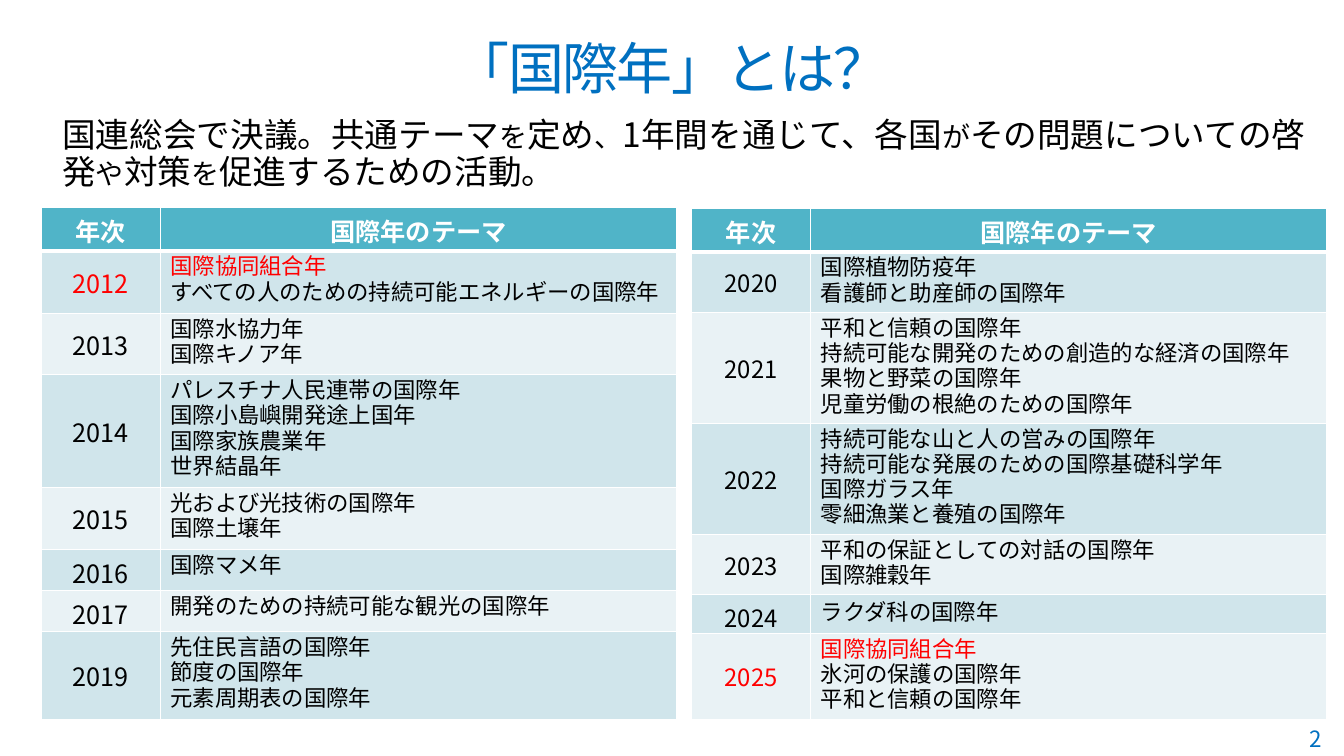
"""Build a slide that explains the United Nations international years."""
from dataclasses import dataclass

from lxml.etree import SubElement
from pptx import Presentation
from pptx.dml.color import RGBColor
from pptx.enum.text import MSO_ANCHOR, PP_ALIGN
from pptx.oxml import parse_xml
from pptx.oxml.ns import nsdecls, qn
from pptx.slide import Slide
from pptx.table import _Cell
from pptx.text.text import Font, _Paragraph
from pptx.util import Inches, Pt


@dataclass(frozen=True)
class Theme:
    """Colours, typeface and type sizes of the slide."""
    typeface: str = "Noto Sans CJK JP"
    accent: str = "0070C0"
    text: str = "000000"
    highlight: str = "FF0000"
    white: str = "FFFFFF"
    header: str = "50B4C8"
    bands: tuple[str, str] = ("D0E5EB", "E9F2F5")
    title_size: float = 40
    lead_size: float = 24
    particle_size: float = 20
    header_size: float = 18
    theme_size: float = 16
    theme_leading: float = 18


@dataclass(frozen=True)
class Box:
    """Position and size in inches."""
    left: float
    top: float
    width: float
    height: float


@dataclass(frozen=True)
class Phrase:
    """A piece of the lead sentence."""
    text: str
    size: float
    spacing: float = 0


@dataclass(frozen=True)
class YearRow:
    """A year with its themes and its row height."""
    year: str
    height: float
    themes: tuple[str, ...]


@dataclass(frozen=True)
class YearTable:
    """A table of international years."""
    left: float
    top: float
    year_size: float
    theme_anchor: MSO_ANCHOR
    rows: tuple[YearRow, ...]


THEME = Theme()
COOPERATIVES = "国際協同組合年"
HEADINGS = ("年次", "国際年のテーマ")
COLUMN_WIDTHS = (1.18, 5.12)
HEADER_HEIGHT = 0.43

LEAD = (
    Phrase("国連総会で決議。共通テーマ", THEME.lead_size),
    Phrase("を", THEME.particle_size),
    Phrase("定め", THEME.lead_size),
    Phrase("、", THEME.particle_size, -1.5),
    Phrase("1年間を通じて、各国", THEME.lead_size),
    Phrase("が", THEME.particle_size),
    Phrase("その問題についての啓発", THEME.lead_size),
    Phrase("や", THEME.particle_size),
    Phrase("対策", THEME.lead_size),
    Phrase("を", THEME.particle_size),
    Phrase("促進するための活動。", THEME.lead_size),
)

TABLES = (
    YearTable(0.41, 2.06, 18, MSO_ANCHOR.TOP, (
        YearRow("2012", 0.62, (COOPERATIVES, "すべての人のための持続可能エネルギーの国際年")),
        YearRow("2013", 0.61, ("国際水協力年", "国際キノア年")),
        YearRow("2014", 1.12, ("パレスチナ人民連帯の国際年", "国際小島嶼開発途上国年",
                               "国際家族農業年", "世界結晶年")),
        YearRow("2015", 0.61, ("光および光技術の国際年", "国際土壌年")),
        YearRow("2016", 0.41, ("国際マメ年",)),
        YearRow("2017", 0.41, ("開発のための持続可能な観光の国際年",)),
        YearRow("2019", 0.87, ("先住民言語の国際年", "節度の国際年", "元素周期表の国際年")),
    )),
    YearTable(6.86, 2.07, 17, MSO_ANCHOR.MIDDLE, (
        YearRow("2020", 0.59, ("国際植物防疫年", "看護師と助産師の国際年")),
        YearRow("2021", 1.05, ("平和と信頼の国際年", "持続可能な開発のための創造的な経済の国際年",
                               "果物と野菜の国際年", "児童労働の根絶のための国際年")),
        YearRow("2022", 1.09, ("持続可能な山と人の営みの国際年", "持続可能な発展のための国際基礎科学年",
                               "国際ガラス年", "零細漁業と養殖の国際年")),
        YearRow("2023", 0.59, ("平和の保証としての対話の国際年", "国際雑穀年")),
        YearRow("2024", 0.36, ("ラクダ科の国際年",)),
        YearRow("2025", 0.84, (COOPERATIVES, "氷河の保護の国際年", "平和と信頼の国際年")),
    )),
)


def style_font(font: Font, size: float, color: str, bold: bool = False) -> None:
    """Set the typeface for Latin and Japanese text, the size and the colour."""
    font.name = THEME.typeface
    font.size = Pt(size)
    font.bold = bold
    font.color.rgb = RGBColor.from_string(color)
    SubElement(font._element, qn("a:ea"), typeface=THEME.typeface)


def set_spacing(font: Font, points: float) -> None:
    """Set the space between characters."""
    font._element.set("spc", str(round(points * 100)))


def add_text_box(slide: Slide, box: Box, anchor: MSO_ANCHOR) -> _Paragraph:
    """Add a wrapping text box and return its first paragraph."""
    shape = slide.shapes.add_textbox(Inches(box.left), Inches(box.top),
                                     Inches(box.width), Inches(box.height))
    shape.text_frame.word_wrap = True
    shape.text_frame.vertical_anchor = anchor
    return shape.text_frame.paragraphs[0]


def add_label(slide: Slide, box: Box, text: str, size: float, anchor: MSO_ANCHOR,
              alignment: PP_ALIGN, spacing: float = 0) -> None:
    """Add a single line in the accent colour."""
    paragraph = add_text_box(slide, box, anchor)
    paragraph.text = text
    paragraph.alignment = alignment
    style_font(paragraph.font, size, THEME.accent)
    set_spacing(paragraph.font, spacing)


def add_lead(slide: Slide, box: Box) -> None:
    """Add the lead sentence with smaller particles."""
    paragraph = add_text_box(slide, box, MSO_ANCHOR.TOP)
    paragraph.line_spacing = 0.9
    paragraph.space_before = Pt(10)
    for phrase in LEAD:
        run = paragraph.add_run()
        run.text = phrase.text
        style_font(run.font, phrase.size, THEME.text)
        set_spacing(run.font, phrase.spacing)


def style_cell(cell: _Cell, fill: str, anchor: MSO_ANCHOR, bottom: float = 1) -> None:
    """Fill a cell and give it white borders."""
    cell.vertical_anchor = anchor
    properties = cell._tc.get_or_add_tcPr()
    for side, width in (("L", 1), ("R", 1), ("T", 1), ("B", bottom)):
        properties.append(parse_xml(
            f'<a:ln{side} {nsdecls("a")} w="{Pt(width)}"><a:solidFill>'
            f'<a:srgbClr val="{THEME.white}"/></a:solidFill></a:ln{side}>'))
    cell.fill.solid()
    cell.fill.fore_color.rgb = RGBColor.from_string(fill)


def write_centred(cell: _Cell, text: str, size: float, color: str, bold: bool = False) -> None:
    """Write one centred line in a cell."""
    paragraph = cell.text_frame.paragraphs[0]
    paragraph.text = text
    paragraph.alignment = PP_ALIGN.CENTER
    style_font(paragraph.font, size, color, bold)


def write_themes(cell: _Cell, themes: tuple[str, ...]) -> None:
    """Write one theme per paragraph."""
    cell.text = "\n".join(themes)
    for paragraph, name in zip(cell.text_frame.paragraphs, themes):
        paragraph.line_spacing = Pt(THEME.theme_leading)
        color = THEME.highlight if name == COOPERATIVES else THEME.text
        style_font(paragraph.font, THEME.theme_size, color)


def add_year_table(slide: Slide, content: YearTable) -> None:
    """Add a table with a header row and banded year rows."""
    heights = [HEADER_HEIGHT] + [row.height for row in content.rows]
    table = slide.shapes.add_table(
        len(heights), len(COLUMN_WIDTHS), Inches(content.left), Inches(content.top),
        Inches(sum(COLUMN_WIDTHS)), Inches(sum(heights))).table
    for column, width in zip(table.columns, COLUMN_WIDTHS):
        column.width = Inches(width)
    for table_row, height in zip(table.rows, heights):
        table_row.height = Inches(height)
    for index, heading in enumerate(HEADINGS):
        cell = table.cell(0, index)
        style_cell(cell, THEME.header, MSO_ANCHOR.MIDDLE, bottom=3)
        write_centred(cell, heading, THEME.header_size, THEME.white, bold=True)
    for index, row in enumerate(content.rows):
        year_cell, theme_cell = table.rows[index + 1].cells
        band = THEME.bands[index % 2]
        style_cell(year_cell, band, MSO_ANCHOR.MIDDLE)
        style_cell(theme_cell, band, content.theme_anchor)
        color = THEME.highlight if COOPERATIVES in row.themes else THEME.text
        write_centred(year_cell, row.year, content.year_size, color)
        write_themes(theme_cell, row.themes)


def main() -> None:
    """Build and save the presentation."""
    presentation = Presentation()
    presentation.slide_width, presentation.slide_height = Inches(13.33), Inches(7.5)
    slide = presentation.slides.add_slide(presentation.slide_layouts[6])
    add_label(slide, Box(0.8, 0.29, 11.73, 0.76), "「国際年」とは？", THEME.title_size,
              MSO_ANCHOR.MIDDLE, PP_ALIGN.CENTER, spacing=-1.2)
    add_label(slide, Box(10.42, 7.14, 2.79, 0.37), "2", THEME.theme_size,
              MSO_ANCHOR.BOTTOM, PP_ALIGN.RIGHT)
    add_lead(slide, Box(0.52, 1.13, 12.55, 0.86))
    for content in TABLES:
        add_year_table(slide, content)
    presentation.save("out.pptx")


if __name__ == "__main__":
    main()
